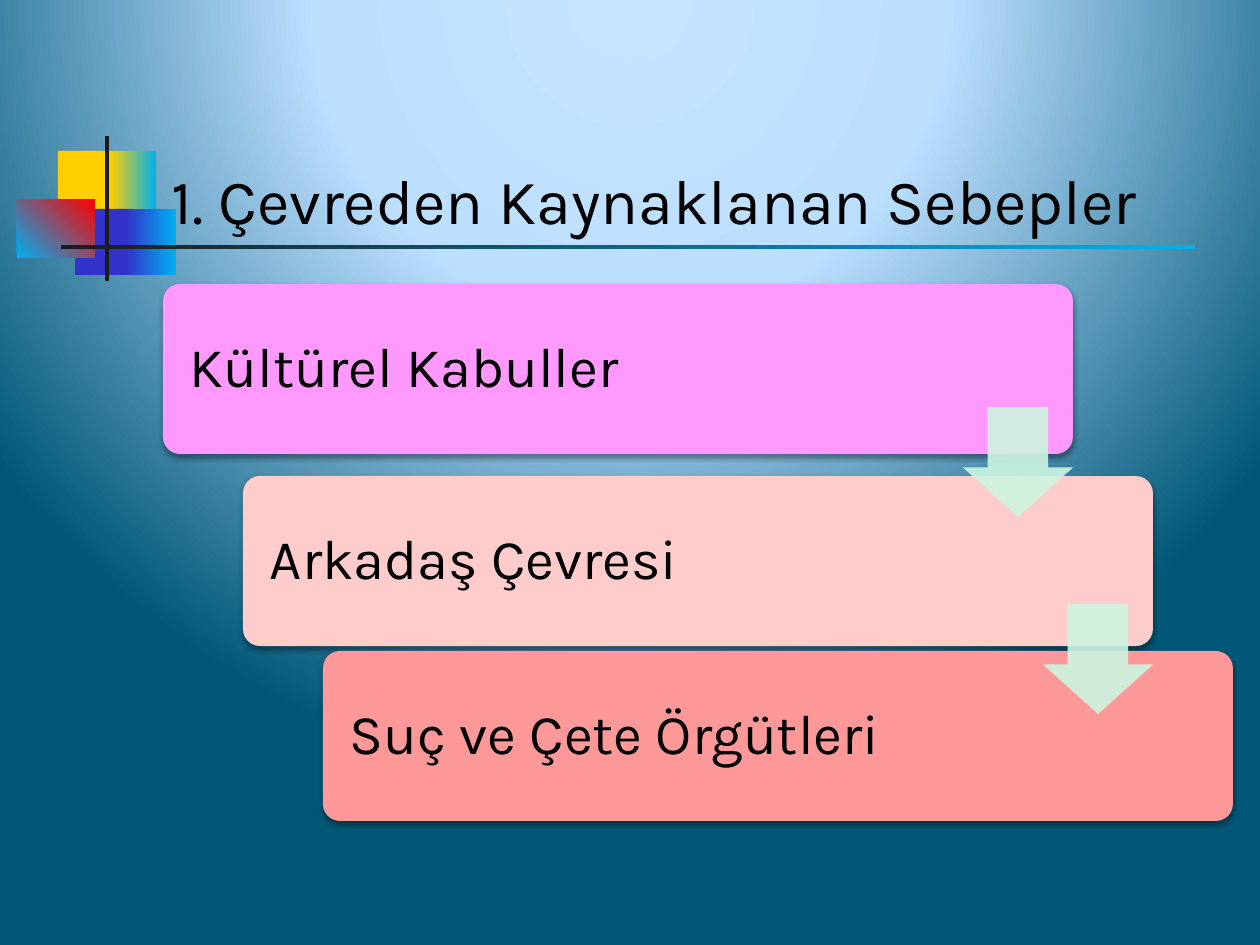
from typing import NamedTuple, Optional

import pptx
import pptx.dml.color
import pptx.enum.shapes
import pptx.enum.text
import pptx.oxml
import pptx.oxml.ns
import pptx.util

RGB = pptx.dml.color.RGBColor
SHAPE = pptx.enum.shapes.MSO_SHAPE
ANCHOR = pptx.enum.text.MSO_ANCHOR
ALIGN = pptx.enum.text.PP_ALIGN
qn = pptx.oxml.ns.qn
NS = pptx.oxml.ns.nsdecls("a")

PX_PER_INCH = 126
FONT = "Karla"

BLACK = RGB(0, 0, 0)
CHARCOAL = RGB(0x1C, 0x1C, 0x1C)
YELLOW = RGB(0xFF, 0xCF, 0x01)
INDIGO = RGB(0x33, 0x33, 0xCC)
SKY = RGB(0x00, 0xB0, 0xF0)
RED = RGB(0xFF, 0, 0)
PINK = RGB(0xFF, 0x99, 0xFF)
BLUSH = RGB(0xFF, 0xCC, 0xCC)
CORAL = RGB(0xFF, 0x99, 0x99)
MINT = RGB(0xCC, 0xF5, 0xE1)
BACKDROP = [(0, RGB(0xC6, 0xE4, 0xFF)), (40, RGB(0xBC, 0xDF, 0xFF)),
            (100, RGB(0x00, 0x57, 0x77))]

CARD_LEFT, CARD_STEP = 163, 80
CARD_WIDTH, CARD_HEIGHT = 910, 170
ARROW_SIZE = 110


class Block(NamedTuple):
    """A rectangle of the ornament; with an end colour it is a gradient."""
    left: int
    top: int
    width: int
    height: int
    color: RGB
    end: Optional[RGB] = None
    angle: int = 0


class Card(NamedTuple):
    text: str
    top: int
    color: RGB
    arrow_top: Optional[int] = None


ORNAMENT = [
    Block(58, 151, 60, 66, YELLOW),
    Block(110, 151, 46, 66, YELLOW, SKY),
    Block(75, 209, 58, 66, INDIGO),
    Block(126, 209, 50, 66, INDIGO, SKY),
    Block(17, 199, 78, 59, SKY, RED, 45),
    Block(105, 136, 4, 145, CHARCOAL),
    Block(61, 245, 1134, 4, CHARCOAL, SKY),
]
CARDS = [
    Card("Kültürel Kabuller", 284, PINK, 407),
    Card("Arkadaş Çevresi", 476, BLUSH, 604),
    Card("Suç ve Çete Örgütleri", 651, CORAL),
]


def px(n: int) -> pptx.util.Emu:
    return pptx.util.Emu(round(n * 914400 / PX_PER_INCH))


def set_backdrop(slide) -> None:
    """Fill the background with a circular gradient centred above the top."""
    slide.background.fill.solid()
    stops = "".join(f'<a:gs pos="{pos * 1000}"><a:srgbClr val="{color}"/></a:gs>'
                    for pos, color in BACKDROP)
    grad = pptx.oxml.parse_xml(
        f'<a:gradFill {NS} rotWithShape="1"><a:gsLst>{stops}</a:gsLst>'
        '<a:path path="circle"><a:fillToRect l="50000" t="-80000" '
        'r="50000" b="180000"/></a:path></a:gradFill>')
    bg = slide.element.find(".//" + qn("p:bgPr"))
    bg.replace(bg.find(qn("a:solidFill")), grad)


def add_shape(slide, kind, left: int, top: int, width: int, height: int, color: RGB):
    sp = slide.shapes.add_shape(kind, px(left), px(top), px(width), px(height))
    sp.shadow.inherit = False
    sp.line.fill.background()
    sp.fill.solid()
    sp.fill.fore_color.rgb = color
    return sp


def add_block(slide, block: Block) -> None:
    sp = add_shape(slide, SHAPE.RECTANGLE, *block[:5])
    if block.end is not None:
        sp.fill.gradient()
        sp.fill.gradient_angle = block.angle
        for stop, color in zip(sp.fill.gradient_stops, (block.color, block.end)):
            stop.color.rgb = color


def write(tf, text: str, size: int, anchor) -> None:
    tf.word_wrap = True
    tf.auto_size = pptx.enum.text.MSO_AUTO_SIZE.NONE
    tf.vertical_anchor = anchor
    p = tf.paragraphs[0]
    p.text = text
    p.alignment = ALIGN.LEFT
    p.font.name = FONT
    p.font.size = pptx.util.Pt(size)
    p.font.color.rgb = BLACK


def add_title(slide, text: str) -> None:
    title = slide.shapes.title
    title.left, title.top, title.width, title.height = map(px, (159, 86, 1073, 157))
    write(title.text_frame, text, 36, ANCHOR.BOTTOM)


def add_card(slide, card: Card, left: int) -> None:
    sp = add_shape(slide, SHAPE.ROUNDED_RECTANGLE, left, card.top,
                   CARD_WIDTH, CARD_HEIGHT, card.color)
    sp.adjustments[0] = 0.1
    sp.element.spPr.find(qn("a:effectLst")).append(pptx.oxml.parse_xml(
        f'<a:outerShdw {NS} blurRad="40000" dist="20000" dir="5400000" '
        'rotWithShape="0"><a:srgbClr val="000000"><a:alpha val="38000"/>'
        '</a:srgbClr></a:outerShdw>'))
    tf = sp.text_frame
    tf.margin_left = tf.margin_right = px(22)
    write(tf, card.text, 32, ANCHOR.MIDDLE)
    tf.paragraphs[0].line_spacing = 0.9


def add_arrow(slide, left: int, top: int) -> None:
    sp = add_shape(slide, SHAPE.DOWN_ARROW, left, top, ARROW_SIZE, ARROW_SIZE, MINT)
    sp.adjustments[0] = 0.55
    sp.adjustments[1] = 0.45
    color = sp.element.spPr.find(qn("a:solidFill"))[0]
    color.append(pptx.oxml.parse_xml(f'<a:alpha {NS} val="90000"/>'))


def main() -> None:
    prs = pptx.Presentation()
    prs.slide_width, prs.slide_height = px(1260), px(945)
    slide = prs.slides.add_slide(prs.slide_layouts.get_by_name("Title Only"))
    set_backdrop(slide)
    for block in ORNAMENT:
        add_block(slide, block)
    add_title(slide, "1. Çevreden Kaynaklanan Sebepler")
    # The title reads over the ornament, so it goes to the front of it.
    slide.shapes.title.element.getparent().append(slide.shapes.title.element)

    lefts = [CARD_LEFT + i * CARD_STEP for i in range(len(CARDS))]
    for card, left in zip(CARDS, lefts):
        add_card(slide, card, left)
    for card, left in zip(CARDS, lefts):
        if card.arrow_top is not None:
            add_arrow(slide, left + CARD_WIDTH - ARROW_SIZE, card.arrow_top)
    prs.save("out.pptx")


if __name__ == "__main__":
    main()
